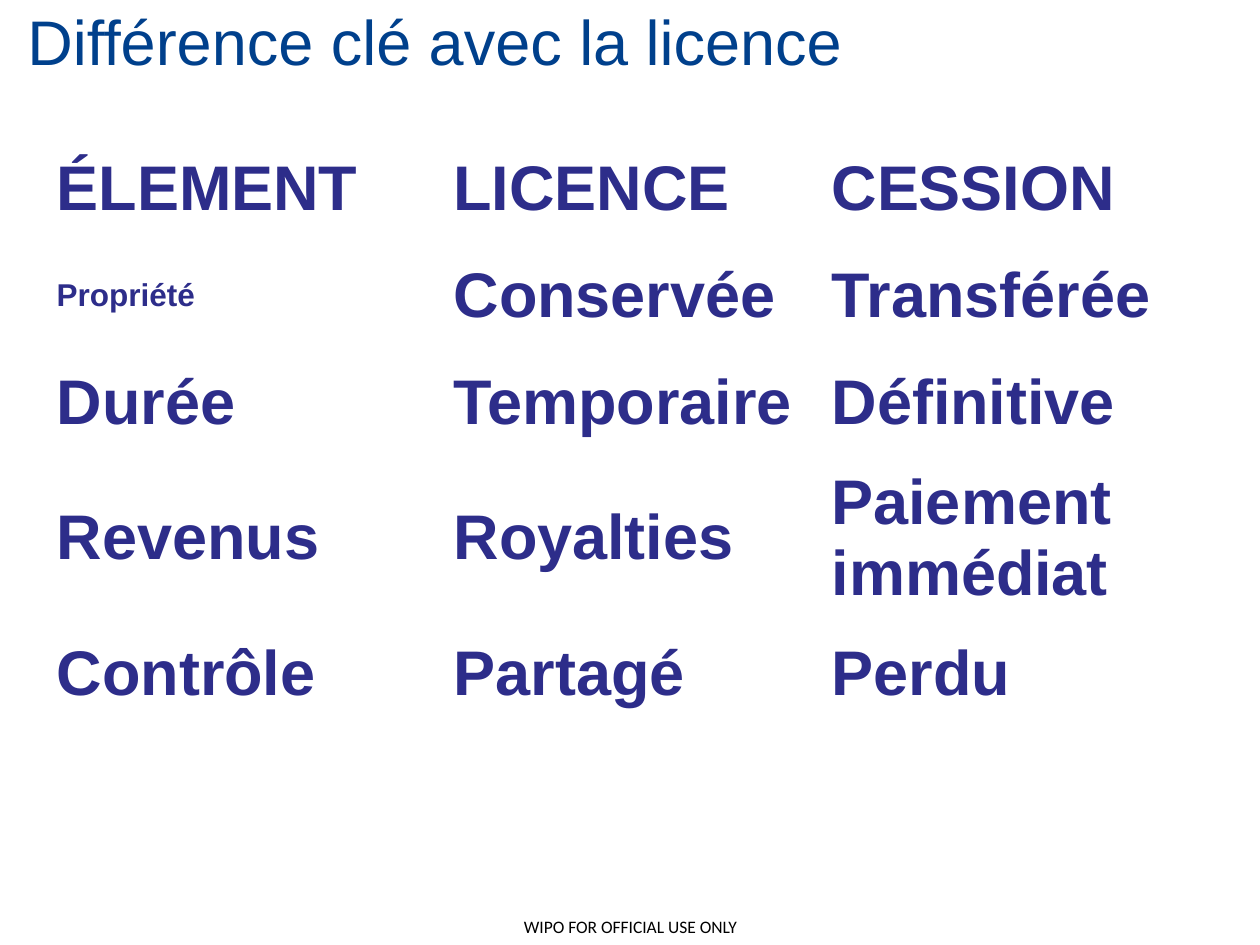
from dataclasses import dataclass

from pptx import Presentation
from pptx.dml.color import RGBColor
from pptx.enum.text import MSO_ANCHOR, PP_ALIGN
from pptx.util import Pt

MIDDLE = MSO_ANCHOR.MIDDLE
LEFT, CENTER = PP_ALIGN.LEFT, PP_ALIGN.CENTER


@dataclass(frozen=True)
class Theme:
    heading: RGBColor = RGBColor(0x00, 0x40, 0x8C)
    cell: RGBColor = RGBColor(0x2D, 0x2D, 0x8A)
    footer: RGBColor = RGBColor(0x00, 0x00, 0x00)
    large: int = 36
    medium: int = 18
    small: int = 10
    body_font: str = "Arial"
    footer_font: str = "Calibri"


THEME = Theme()

ROWS = [
    ("ÉLEMENT", "LICENCE", "CESSION"),
    ("Propriété", "Conservée", "Transférée"),
    ("Durée", "Temporaire", "Définitive"),
    ("Revenus", "Royalties", "Paiement immédiat"),
    ("Contrôle", "Partagé", "Perdu"),
]
SMALLER_LABEL = "Propriété"


def write(frame, text, color, align=LEFT, **font_values):
    para = frame.paragraphs[0]
    para.alignment = align
    span = para.add_run()
    span.text = text
    span.font.color.rgb = color
    for name, value in font_values.items():
        setattr(span.font, name, value)


def add_text(page, box, text, color, margins=None, **values):
    """Add a wrapped, vertically centred text box; margins apply to all sides."""
    frame = page.shapes.add_textbox(*map(Pt, box)).text_frame
    frame.word_wrap = True
    frame.vertical_anchor = MIDDLE
    if margins is not None:
        for side in ("left", "top", "right", "bottom"):
            setattr(frame, f"margin_{side}", Pt(margins))
    write(frame, text, color, **values)


def add_title(page, box):
    add_text(page, box, "Différence clé avec la licence", THEME.heading,
             name=THEME.body_font, size=Pt(THEME.large))


def add_footer(page, box):
    add_text(page, box, "WIPO FOR OFFICIAL USE ONLY", THEME.footer, margins=0,
             align=CENTER, name=THEME.footer_font, size=Pt(THEME.small))


def add_comparison(page, box, other_column=216):
    """Add the table; the first column takes the width the others leave."""
    column_count = len(ROWS[0])
    table = page.shapes.add_table(len(ROWS), column_count, *map(Pt, box)).table
    table.first_row = False
    table.horz_banding = False
    first_column = box[2] - other_column * (column_count - 1)
    for index, column in enumerate(table.columns):
        column.width = Pt(other_column if index else first_column)
    for row, texts in zip(table.rows, ROWS):
        row.height = Pt(box[3] / len(ROWS))
        for cell, text in zip(row.cells, texts):
            cell.fill.background()
            cell.vertical_anchor = MIDDLE
            size = THEME.medium if text == SMALLER_LABEL else THEME.large
            write(cell.text_frame, text, THEME.cell, name=THEME.body_font,
                  size=Pt(size), bold=True)


def main():
    deck = Presentation()
    deck.slide_width, deck.slide_height = Pt(720), Pt(540)
    page = deck.slides.add_slide(deck.slide_layouts[6])
    add_footer(page, (286.5, 519, 147.5, 21))
    add_title(page, (8.6, -8, 675.4, 62.6))
    add_comparison(page, (25.2, 77, 658.8, 306))
    deck.save("out.pptx")


if __name__ == "__main__":
    main()
